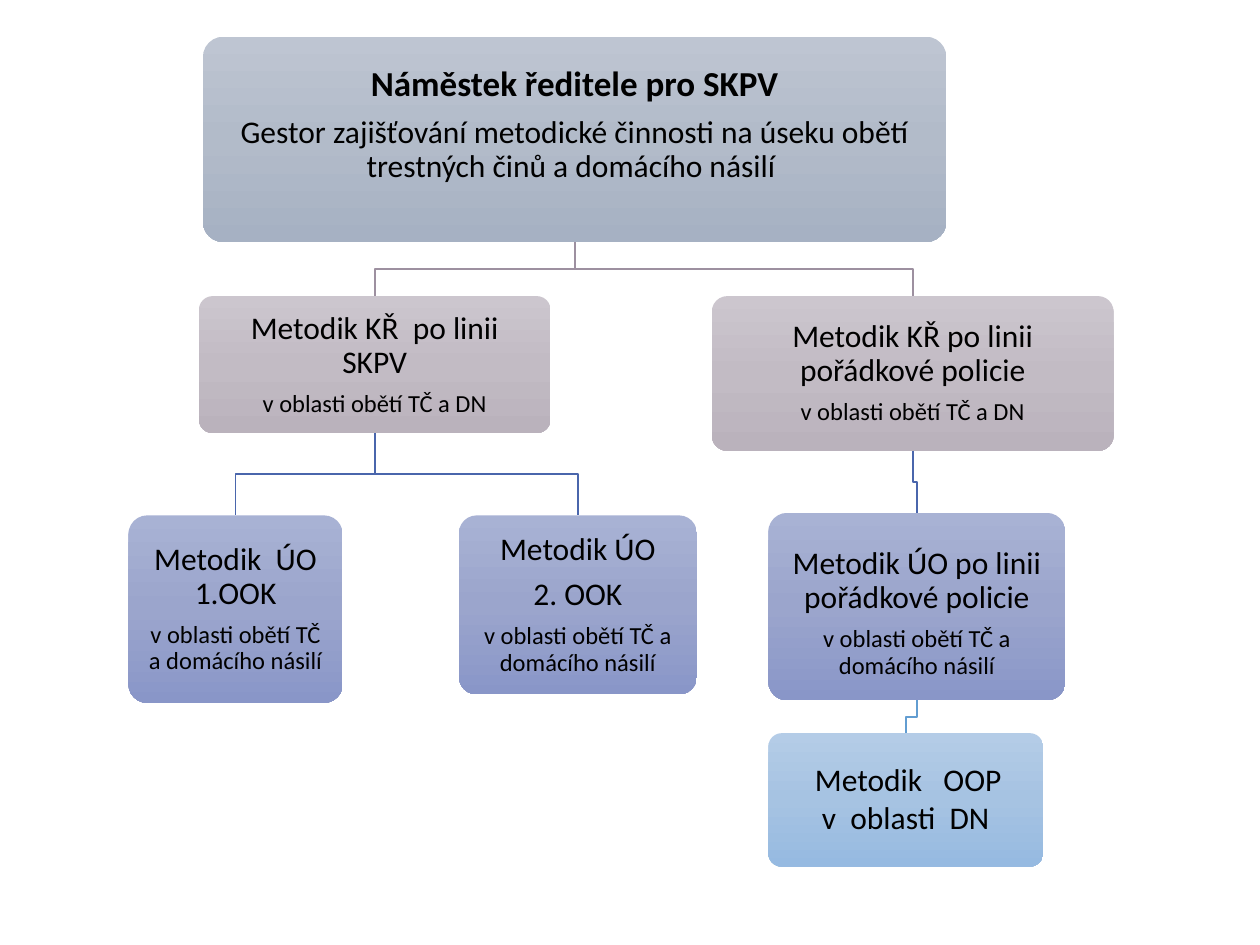
import copy

import pptx
import pptx.dml.color
import pptx.enum.shapes
import pptx.enum.text
import pptx.util

Cm = pptx.util.Cm
Pt = pptx.util.Pt
Align = pptx.enum.text.PP_ALIGN
Anchor = pptx.enum.text.MSO_ANCHOR


def colour(value):
    return pptx.dml.color.RGBColor.from_string(value)


class OrgChart:
    FONT = "Calibri"
    TEXT = "000000"
    SLATE = ("BEC5D2", "B2BBC9", "A6B1C3")
    MAUVE = ("CCC6CE", "C2BBC4", "BAB2BC")
    INDIGO = ("A8B2D4", "9BA5CC", "8996C8")
    SKY = ("B4CCE7", "A6C3E2", "96BAE1")

    def __init__(self, slide):
        self.shapes = slide.shapes

    def shade(self, fill, shades):
        fill.gradient()
        fill.gradient_angle = 270
        first = fill.gradient_stops[0]._gs
        first.addnext(copy.deepcopy(first))
        for stop, shade, position in zip(fill.gradient_stops, shades, (0, 0.5, 1)):
            stop.color.rgb = colour(shade)
            stop.position = position

    def box(self, place, shades, lines, align=Align.CENTER, spacing=0.9, gap=0.35, **frame_format):
        box = self.shapes.add_shape(
            pptx.enum.shapes.MSO_SHAPE.ROUNDED_RECTANGLE, *map(Cm, place))
        box.adjustments[0] = 0.1
        box.shadow.inherit = False
        box.line.fill.background()
        self.shade(box.fill, shades)
        frame = box.text_frame
        inset = Cm(0.28)
        settings = {
            "word_wrap": True, "vertical_anchor": Anchor.MIDDLE,
            "margin_left": inset, "margin_right": inset,
            "margin_top": inset, "margin_bottom": inset,
        }
        for name, value in (settings | frame_format).items():
            setattr(frame, name, value)
        for index, (text, size, bold) in enumerate(lines):
            paragraph = frame.add_paragraph() if index else frame.paragraphs[0]
            paragraph_format = {
                "alignment": align, "line_spacing": spacing, "space_after": Pt(size * gap)}
            for name, value in paragraph_format.items():
                setattr(paragraph, name, value)
            run = paragraph.add_run()
            run.text = text
            for name, value in {"name": self.FONT, "size": Pt(size), "bold": bold}.items():
                setattr(run.font, name, value)
            run.font.color.rgb = colour(self.TEXT)
        return box

    def branch(self, parent, child, line_colour):
        start_x = parent.left + parent.width // 2
        start_y = parent.top + parent.height
        end_x = child.left + child.width // 2
        middle_y = (start_y + child.top) // 2
        builder = self.shapes.build_freeform(start_x, start_y)
        builder.add_line_segments(
            [(start_x, middle_y), (end_x, middle_y), (end_x, child.top)], close=False)
        branch = builder.convert_to_shape()
        branch.shadow.inherit = False
        branch.fill.background()
        branch.line.color.rgb = colour(line_colour)
        branch.line.width = Pt(1)


def main():
    deck = pptx.Presentation()
    deck.slide_width, deck.slide_height = Cm(25.4), Cm(19.05)
    chart = OrgChart(deck.slides.add_slide(deck.slide_layouts[6]))

    area = ("v oblasti obětí TČ a DN", 14, False)
    full_area = ("v oblasti obětí TČ a domácího násilí", 14, False)

    deputy = chart.box((4.09, 0.74, 14.99, 4.14), chart.SLATE, [
        ("Náměstek ředitele pro SKPV", 20, True),
        ("Gestor zajišťování metodické činnosti na úseku obětí "
         "trestných činů a domácího násilí ", 18, False),
    ], margin_bottom=Cm(0.85))
    skpv = chart.box((4.01, 5.97, 7.09, 2.76), chart.MAUVE, [
        ("Metodik KŘ  po linii SKPV", 18, False), area])
    order_police = chart.box((14.35, 5.97, 8.1, 3.12), chart.MAUVE, [
        ("Metodik KŘ po linii pořádkové policie", 18, False), area])
    first_district = chart.box((2.59, 10.39, 4.32, 3.78), chart.INDIGO, [
        ("Metodik  ÚO 1.OOK", 18, False), full_area])
    second_district = chart.box((9.25, 10.39, 4.8, 3.61), chart.INDIGO, [
        ("Metodik ÚO", 18, False), ("2. OOK", 18, False), full_area])
    police_district = chart.box((15.49, 10.34, 5.99, 3.78), chart.INDIGO, [
        ("Metodik ÚO po linii pořádkové policie", 18, False), full_area,
    ], margin_top=Cm(0.56))
    local_unit = chart.box((15.49, 14.78, 5.54, 2.69), chart.SKY, [
        ("Metodik   OOP", 18, False), (" v  oblasti  DN", 18, False),
    ], align=Align.LEFT, spacing=1.0, gap=0, vertical_anchor=Anchor.TOP,
        margin_left=Cm(0.86), margin_top=Cm(0.46))

    for parent, child, line_colour in (
        (deputy, skpv, "9D90A0"),
        (deputy, order_police, "9D90A0"),
        (skpv, first_district, "4A66AC"),
        (skpv, second_district, "4A66AC"),
        (order_police, police_district, "4A66AC"),
        (police_district, local_unit, "629DD1"),
    ):
        chart.branch(parent, child, line_colour)

    deck.save("out.pptx")


if __name__ == "__main__":
    main()
